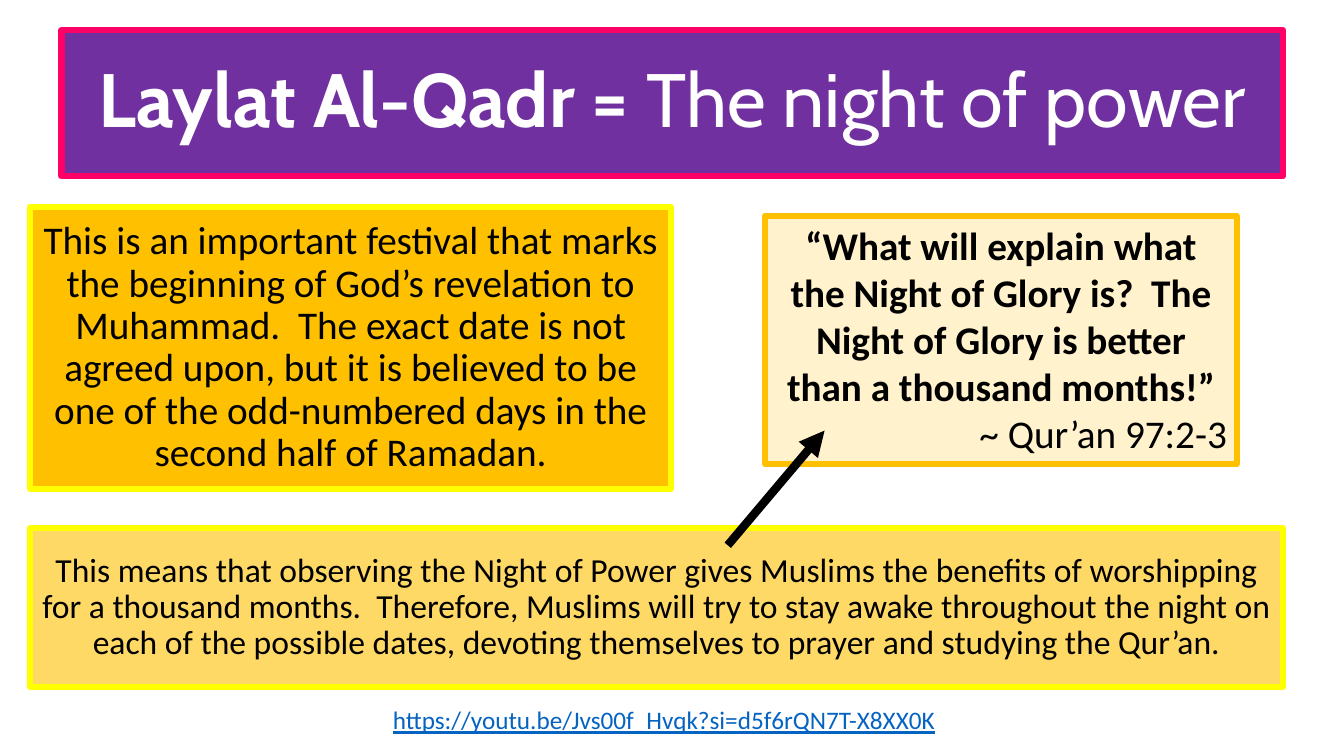
from lxml.etree import SubElement
from pptx import Presentation
from pptx.dml.color import RGBColor
from pptx.enum.shapes import MSO_CONNECTOR, MSO_SHAPE
from pptx.enum.text import MSO_ANCHOR, MSO_AUTO_SIZE, PP_ALIGN
from pptx.oxml.ns import qn
from pptx.util import Cm, Pt

LEFT = 0.76
BLACK, WHITE, YELLOW, AMBER = "000000", "FFFFFF", "FFFF00", "FFC000"


def color(hex_text):
    return RGBColor.from_string(hex_text)


def place(box, left, top, width, height):
    box.left, box.top, box.width, box.height = map(Cm, (left, top, width, height))


def style_box(box, fill, border, anchor=MSO_ANCHOR.MIDDLE):
    box.fill.solid()
    box.fill.fore_color.rgb = color(fill)
    box.line.color.rgb = color(border)
    box.line.width = Pt(4.5)
    frame = box.text_frame
    frame.word_wrap = True
    frame.auto_size = MSO_AUTO_SIZE.NONE
    frame.vertical_anchor = anchor


def add_panel(slide, bounds, fill, border, anchor=MSO_ANCHOR.MIDDLE):
    panel = slide.shapes.add_shape(MSO_SHAPE.RECTANGLE, *map(Cm, bounds))
    panel.shadow.inherit = False
    style_box(panel, fill, border, anchor)
    return panel


def write(paragraph, runs, size, font="Calibri", ink=BLACK,
          align=PP_ALIGN.CENTER, spacing=0.9, bold=False):
    """Fill a paragraph with (text, bold) runs, or with one plain text."""
    paragraph.alignment = align
    paragraph.line_spacing = spacing
    paragraph.space_before = Pt(0)
    paragraph.font.name = font
    paragraph.font.size = Pt(size)
    paragraph.font.color.rgb = color(ink)
    if isinstance(runs, str):
        paragraph.font.bold = bold
        paragraph.add_run().text = runs
        return
    for text, run_bold in runs:
        run = paragraph.add_run()
        run.text = text
        run.font.bold = run_bold


def remove_bullet(paragraph):
    properties = paragraph._p.get_or_add_pPr()
    properties.set("marL", "0")
    properties.set("indent", "0")
    SubElement(properties, qn("a:buNone"))


def add_arrow(slide, start, end, width):
    arrow = slide.shapes.add_connector(
        MSO_CONNECTOR.STRAIGHT, *map(Cm, start + end))
    arrow.line.color.rgb = color(BLACK)
    arrow.line.width = Pt(width)
    SubElement(arrow.line._get_or_add_ln(), qn("a:tailEnd"), type="triangle")
    SubElement(arrow._element.spPr, qn("a:effectLst"))


def main():
    prs = Presentation()
    prs.slide_width, prs.slide_height = Cm(33.87), Cm(19.05)
    slide = prs.slides.add_slide(prs.slide_layouts[1])

    # Title
    title = slide.shapes.title
    place(title, 1.55, LEFT, 30.78, 3.68)
    style_box(title, "7030A0", "FF0066")
    write(title.text_frame.paragraphs[0],
          [("Laylat Al-Qadr = ", True), ("The night of power", False)],
          54, "Cabin", WHITE)

    # What the festival marks
    festival = slide.placeholders[1]
    place(festival, LEFT, 5.21, 16.15, 7.11)
    style_box(festival, AMBER, YELLOW)
    festival_text = festival.text_frame.paragraphs[0]
    remove_bullet(festival_text)
    write(festival_text,
          "This is an important festival that marks the beginning of God’s "
          "revelation to Muhammad.  The exact date is not agreed upon, but it "
          "is believed to be one of the odd-numbered days in the second half "
          "of Ramadan.", 28)

    # Video address
    video = slide.shapes.add_textbox(Cm(9.65), Cm(17.63), Cm(14.55), Cm(1.02))
    video.text_frame.word_wrap = False
    address = video.text_frame.paragraphs[0]
    write(address, "https://youtu.be/Jvs00f_Hvqk?si=d5f6rQN7T-X8XX0K", 18,
          ink="0563C1", align=PP_ALIGN.LEFT, spacing=1.0)
    address.font.underline = True

    # Quotation and its reference
    quotation = add_panel(slide, (19.28, 5.44, 11.89, 6.25), "FFF2CC", AMBER,
                          MSO_ANCHOR.TOP).text_frame
    write(quotation.paragraphs[0],
          "“What will explain what the Night of Glory is?  The Night of Glory "
          "is better than a thousand months!”", 28, spacing=1.0, bold=True)
    write(quotation.add_paragraph(), "~ Qur’an 97:2-3", 28,
          align=PP_ALIGN.RIGHT, spacing=1.0)

    # What the quotation means
    meaning = add_panel(slide, (LEFT, 13.31, 31.57, 4.01), "FFD966", YELLOW)
    write(meaning.text_frame.paragraphs[0],
          "This means that observing the Night of Power gives Muslims the "
          "benefits of worshipping for a thousand months.  Therefore, Muslims "
          "will try to stay awake throughout the night on each of the possible "
          "dates, devoting themselves to prayer and studying the Qur’an.", 24)
    add_arrow(slide, (18.34, 13.74), (20.78, 10.85), 6)

    prs.save("out.pptx")


if __name__ == "__main__":
    main()
